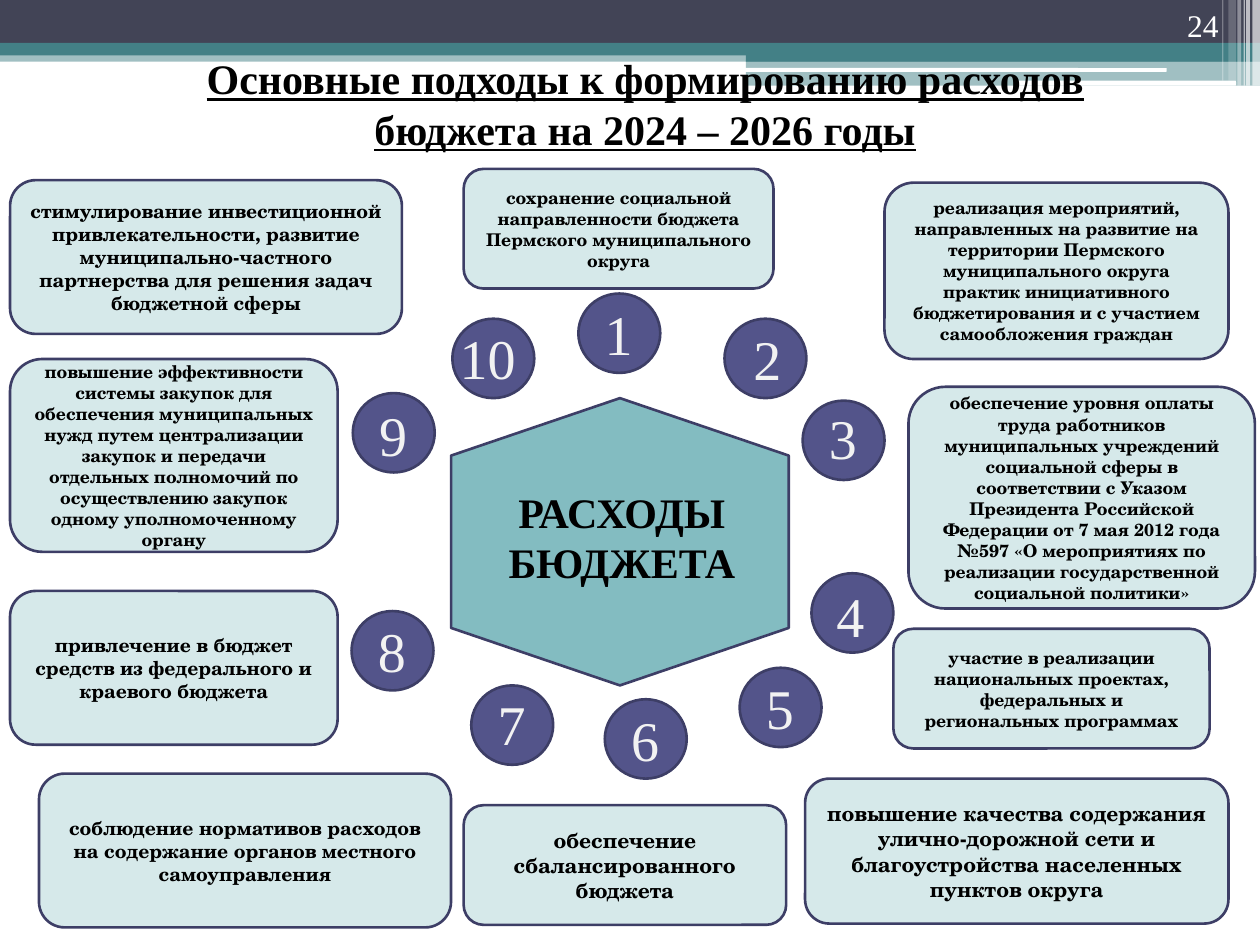
"""Build the slide on the main approaches to budget spending."""
from lxml.etree import SubElement
from pptx import Presentation
from pptx.dml.color import RGBColor
from pptx.enum.shapes import MSO_SHAPE as SHAPE
from pptx.enum.text import MSO_ANCHOR as ANCHOR, PP_ALIGN as ALIGN
from pptx.oxml.ns import qn
from pptx.util import Pt

PX = 9144
SERIF, BOOK = "Times New Roman", "TeX Gyre Schola"
NAVY, TEAL, WHITE, BLACK = "424456", "438086", "FFFFFF", "000000"
EDGE = "3D3E66"

deck = Presentation()
deck.slide_width, deck.slide_height = 1000 * PX, 750 * PX
slide = deck.slides.add_slide(deck.slide_layouts[6])


def draw(kind, at, fill, edge=None, alpha=100):
    shape = slide.shapes.add_shape(kind, *[n * PX for n in at])
    shape.shadow.inherit = False
    shape.fill.solid()
    shape.fill.fore_color.rgb = RGBColor.from_string(fill)
    if alpha < 100:
        color = shape.fill._xPr.find(qn("a:solidFill"))[0]
        SubElement(color, qn("a:alpha")).set("val", str(alpha * 1000))
    if edge:
        shape.line.color.rgb = RGBColor.from_string(edge)
        shape.line.width = Pt(1.5)
    else:
        shape.line.fill.background()
    return shape


def write(shape, text, size, font=SERIF, color=BLACK, bold=False,
          align=ALIGN.CENTER, anchor=ANCHOR.MIDDLE):
    frame = shape.text_frame
    frame.text = text
    frame.word_wrap = True
    frame.vertical_anchor = anchor
    para = frame.paragraphs[0]
    para.alignment = align
    for run in para.runs:
        run.font.size, run.font.name, run.font.bold = Pt(size), font, bold
        run.font.color.rgb = RGBColor.from_string(color)
    return para


bands = [
    ((0, 40, 1000, 9), TEAL, 50), ((0, 0, 1000, 34), NAVY, 100),
    ((0, 34, 1000, 10), TEAL, 100), ((592, 39, 408, 10), TEAL, 100),
    ((592, 48, 408, 20), TEAL, 50),
]
for at, fill, alpha in bands:
    draw(SHAPE.RECTANGLE, at, fill, alpha=alpha)

for at in [(591, 54, 335, 3), (806, 64, 175, 4)]:
    draw(SHAPE.ROUNDED_RECTANGLE, at, WHITE)

stripes = [
    (994, 6, 68, 65), (989, 3, 68, 65), (987, 1, 68, 60),
    (982, 3, 68, 40), (975, 6, 64, 20), (970, 1, 64, 30),
]
for left, wide, high, alpha in stripes:
    draw(SHAPE.RECTANGLE, (left, 0, wide, high), WHITE, alpha=alpha)

title = slide.shapes.add_textbox(*[n * PX for n in (120, 20, 784, 124)])
para = write(title, "Основные подходы к формированию расходов бюджета на 2024 – 2026 годы",
             24, bold=True)
para.runs[0].font.underline = True

page = slide.shapes.add_textbox(*[n * PX for n in (894, 0, 83, 40)])
write(page, "24", 18, color=WHITE, align=ALIGN.RIGHT, anchor=ANCHOR.BOTTOM)

center = draw(SHAPE.FLOWCHART_PREPARATION, (378, 296, 228, 268), "83BCC1", EDGE)
center.rotation = 90
label = slide.shapes.add_textbox(*[n * PX for n in (393, 381, 201, 91)])
write(label, "РАСХОДЫ\vБЮДЖЕТА", 24, bold=True, anchor=ANCHOR.TOP)

boxes = [
    ((368, 134, 246, 95), 10,
     "сохранение социальной направленности бюджета Пермского муниципального округа"),
    ((702, 145, 273, 140), 10,
     "реализация мероприятий, направленных на развитие на территории Пермского "
     "муниципального округа практик инициативного бюджетирования и с участием "
     "самообложения граждан"),
    ((721, 307, 275, 176), 10,
     "обеспечение уровня оплаты труда работников муниципальных учреждений социальной "
     "сферы в соответствии с Указом Президента Российской Федерации от 7 мая 2012 года "
     "№597 «О мероприятиях по реализации государственной социальной политики»"),
    ((709, 499, 251, 95), 10,
     "участие в реализации национальных проектах, федеральных и региональных программах"),
    ((639, 618, 336, 115), 12,
     "повышение качества содержания улично-дорожной сети и благоустройства "
     "населенных пунктов округа"),
    ((368, 639, 256, 95), 12, "обеспечение сбалансированного бюджета"),
    ((31, 614, 327, 122), 11,
     "соблюдение нормативов расходов на содержание органов местного самоуправления"),
    ((8, 469, 260, 122), 11,
     "привлечение в бюджет средств из федерального и краевого бюджета"),
    ((8, 285, 260, 153), 10,
     "повышение эффективности системы закупок для обеспечения муниципальных нужд путем "
     "централизации закупок и передачи отдельных полномочий по осуществлению закупок "
     "одному уполномоченному органу"),
    ((8, 143, 311, 122), 11,
     "стимулирование инвестиционной привлекательности, развитие муниципально-частного "
     "партнерства для решения задач бюджетной сферы"),
]
for at, size, text in boxes:
    box = draw(SHAPE.ROUNDED_RECTANGLE, at, "D6E9EA", EDGE)
    write(box, text, size, BOOK, bold=True)

discs = [
    (459, 233, 470, 233), (575, 253, 588, 253), (637, 318, 648, 315),
    (644, 455, 654, 457), (587, 530, 598, 530), (480, 555, 491, 555),
    (374, 544, 385, 542), (279, 485, 290, 484), (280, 312, 291, 313),
    (359, 253, 355, 252),
]
for num, (left, top, x, y) in enumerate(discs, 1):
    draw(SHAPE.OVAL, (left, top, 65, 63), "53548A", EDGE)
    wide = 83 if num > 9 else 42
    digit = slide.shapes.add_textbox(x * PX, y * PX, wide * PX, 64 * PX)
    write(digit, str(num), 32, color="F2F2F2", align=ALIGN.LEFT, anchor=ANCHOR.TOP)

deck.save("out.pptx")
